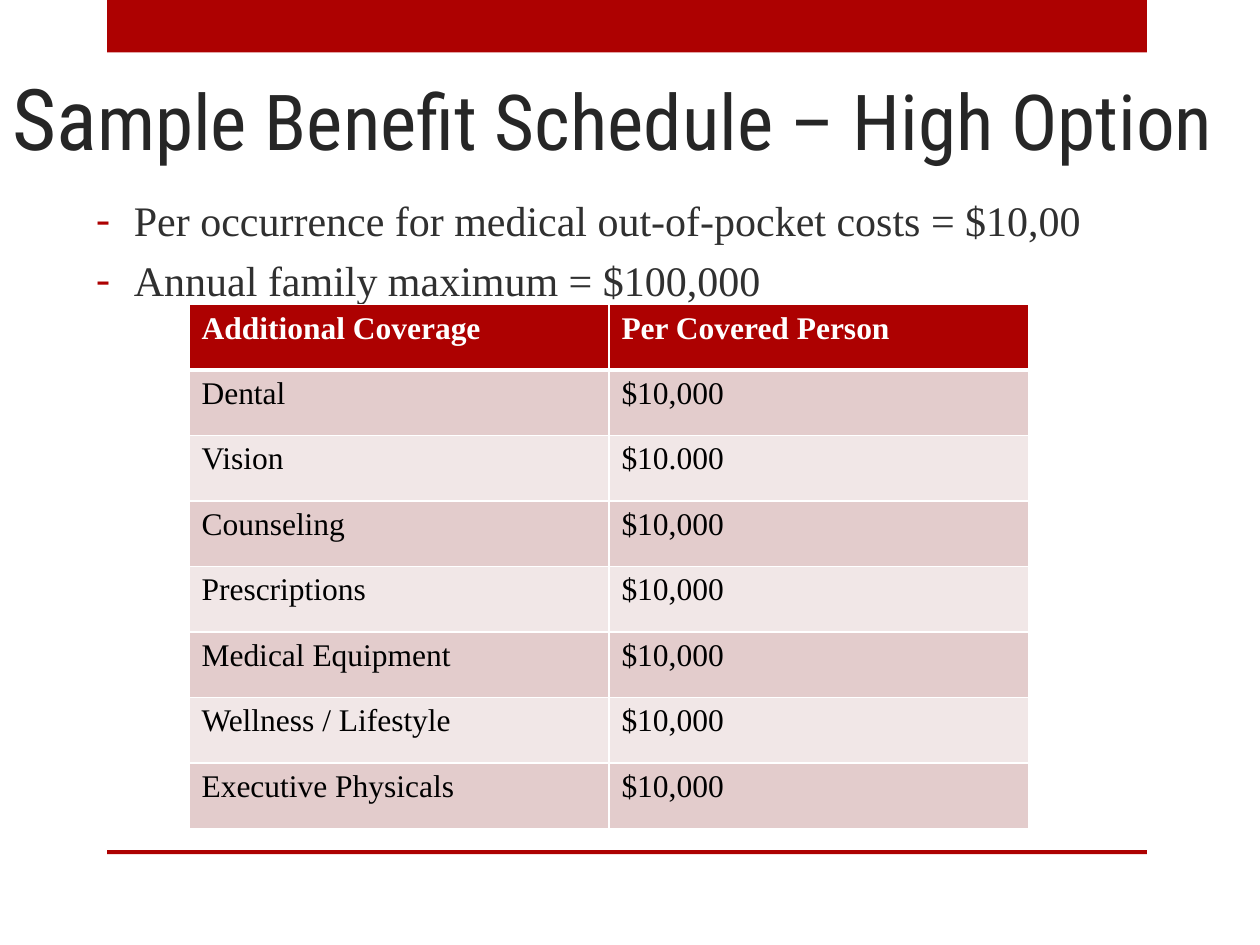
from dataclasses import dataclass
from lxml.etree import SubElement as Sub
from pptx import Presentation
from pptx.dml.color import RGBColor as Rgb
from pptx.enum.shapes import MSO_SHAPE as Kind
from pptx.enum.text import MSO_ANCHOR as Anchor
from pptx.oxml.ns import qn
from pptx.util import Cm, Pt


@dataclass(frozen=True)
class Theme:
    red: str = "AD0101"
    white: str = "FFFFFF"
    black: str = "000000"
    title: str = "262626"
    body: str = "303030"
    bands: tuple = ("E3CCCC", "F1E7E7")
    head: str = "Roboto Condensed"
    serif: str = "Times New Roman"
    big: float = 48.6
    large: float = 44.1
    text: float = 24
    cell: float = 18


T = Theme()
POINTS = (
    "Per occurrence for medical out-of-pocket costs = $10,00",
    "Annual family maximum = $100,000",
)
ROWS = (
    ("Additional Coverage", "Per Covered Person"),
    ("Dental", "$10,000"),
    ("Vision", "$10.000"),
    ("Counseling", "$10,000"),
    ("Prescriptions", "$10,000"),
    ("Medical Equipment", "$10,000"),
    ("Wellness / Lifestyle", "$10,000"),
    ("Executive Physicals", "$10,000"),
)


def style(run, face, size, color, bold=False):
    font = run.font
    font.name, font.size, font.bold = face, Pt(size), bold
    font.color.rgb = Rgb.from_string(color)


def add_bar(slide, top, height):
    bar = slide.shapes.add_shape(Kind.RECTANGLE, Cm(2.16), Cm(top), Cm(20.96), Cm(height))
    bar.shadow.inherit = False
    bar.fill.solid()
    bar.fill.fore_color.rgb = Rgb.from_string(T.red)
    bar.line.fill.background()


def add_frame(slide, left, top, width, height, anchor):
    box = slide.shapes.add_textbox(Cm(left), Cm(top), Cm(width), Cm(height))
    frame = box.text_frame
    frame.word_wrap = True
    frame.vertical_anchor = anchor
    frame.margin_top = frame.margin_bottom = 0
    return frame


def add_title(slide):
    para = add_frame(slide, 0, 1.27, 25.4, 2.11, Anchor.BOTTOM).paragraphs[0]
    parts = (("Sa", T.big), ("mple Benefit Schedule – High Option", T.large))
    for text, size in parts:
        run = para.add_run()
        run.text = text
        style(run, T.head, size, T.title)


def add_dash(para):
    props = para._p.get_or_add_pPr()
    props.set("marL", str(Cm(0.76)))
    props.set("indent", str(-Cm(0.76)))
    Sub(Sub(props, qn("a:buClr")), qn("a:srgbClr"), val=T.red)
    Sub(props, qn("a:buFont"), typeface=T.serif)
    Sub(props, qn("a:buChar"), char="-")


def add_points(slide):
    frame = add_frame(slide, 1.69, 3.92, 20.96, 2.2, Anchor.TOP)
    frame.text = "\n".join(POINTS)
    for para in frame.paragraphs:
        para.space_after = Pt(5.5)
        add_dash(para)
        style(para.runs[0], T.serif, T.text, T.body)


def add_edges(cell, top, bottom):
    props = cell._tc.get_or_add_tcPr()
    for side, width in (("L", 1), ("R", 1), ("T", top), ("B", bottom)):
        line = Sub(props, qn(f"a:ln{side}"), w=str(Pt(width)))
        Sub(Sub(line, qn("a:solidFill")), qn("a:srgbClr"), val=T.white)


def add_grid(slide):
    count = len(ROWS)
    shape = slide.shapes.add_table(count, 2, Cm(3.81), Cm(6.14), Cm(16.93), Cm(1.32 * count))
    table = shape.table
    for i, row in enumerate(ROWS):
        first = i == 0
        fill = T.red if first else T.bands[(i - 1) % 2]
        for j, text in enumerate(row):
            cell = table.cell(i, j)
            cell.text = text
            run = cell.text_frame.paragraphs[0].runs[0]
            style(run, T.serif, T.cell, T.white if first else T.black, first)
            add_edges(cell, 3 if i == 1 else 1, 3 if first else 1)
            cell.fill.solid()
            cell.fill.fore_color.rgb = Rgb.from_string(fill)


def main():
    deck = Presentation()
    deck.slide_width, deck.slide_height = Cm(25.4), Cm(19.05)
    slide = deck.slides.add_slide(deck.slide_layouts[6])
    add_bar(slide, 0, 1.06)
    add_bar(slide, 17.14, 0.08)
    add_title(slide)
    add_points(slide)
    add_grid(slide)
    deck.save("out.pptx")


if __name__ == "__main__":
    main()
